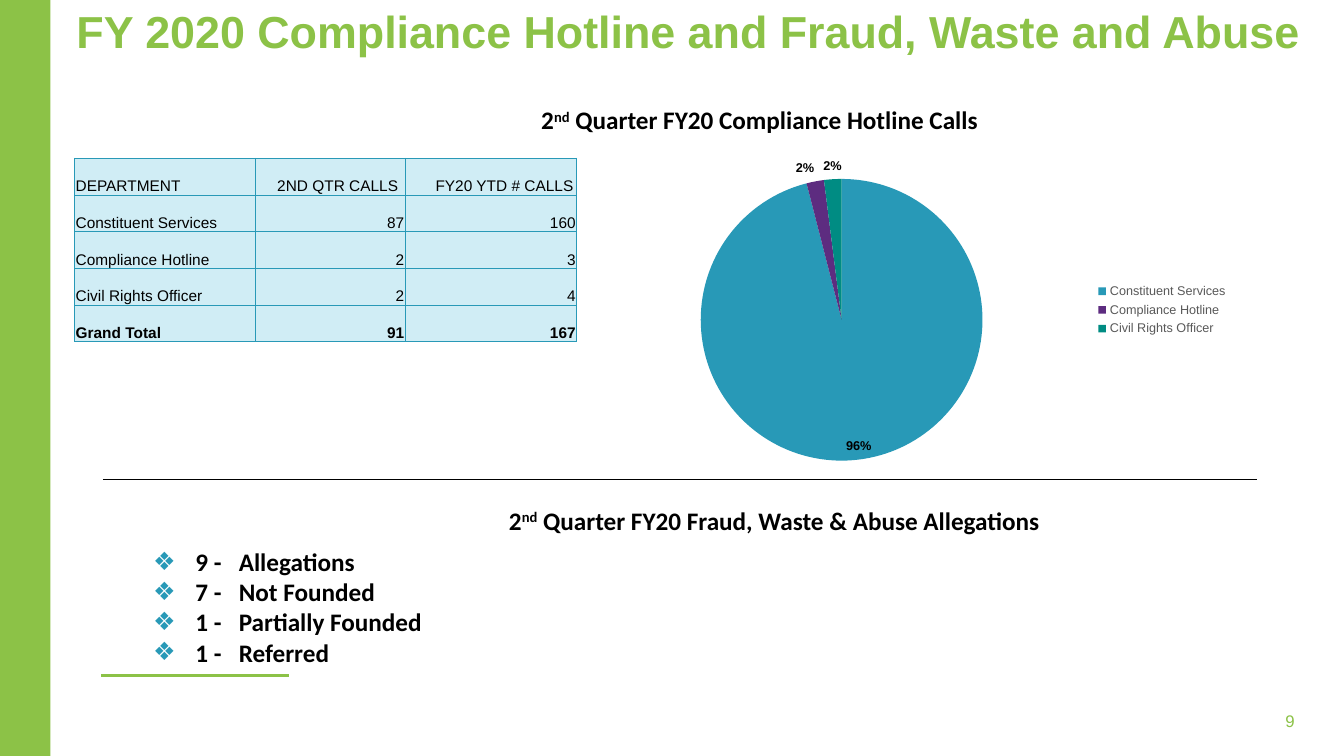
import pptx
import pptx.chart.data
import pptx.dml.color
import pptx.enum.chart
import pptx.enum.shapes
import pptx.enum.text
import pptx.oxml
import pptx.oxml.ns
import pptx.util

Inches = pptx.util.Inches
Pt = pptx.util.Pt
RGBColor = pptx.dml.color.RGBColor
Align = pptx.enum.text.PP_ALIGN
Anchor = pptx.enum.text.MSO_ANCHOR

GREEN = RGBColor(0x8C, 0xC2, 0x47)
TEAL = RGBColor(0x28, 0x99, 0xB7)
PURPLE = RGBColor(0x5D, 0x2C, 0x80)
JADE = RGBColor(0x00, 0x8C, 0x83)
PALE = RGBColor(0xD0, 0xED, 0xF5)
GRAY = RGBColor(0x59, 0x59, 0x59)
BLACK = RGBColor(0, 0, 0)

CALLS = [
    ("DEPARTMENT", "2ND QTR CALLS", "FY20 YTD # CALLS"),
    ("Constituent Services", "87", "160"),
    ("Compliance Hotline", "2", "3"),
    ("Civil Rights Officer", "2", "4"),
    ("Grand Total", "91", "167"),
]
SHARES = [
    ("Constituent Services", 96, TEAL),
    ("Compliance Hotline", 2, PURPLE),
    ("Civil Rights Officer", 2, JADE),
]
CASES = [(9, "Allegations"), (7, "Not Founded"), (1, "Partially Founded"), (1, "Referred")]


def add_xml(parent, text):
    """Append an element written with the a: or c: prefix."""
    tag = text.replace(">", " " + pptx.oxml.ns.nsdecls("a", "c") + ">", 1)
    parent.append(pptx.oxml.parse_xml(tag))


def set_font(font, size, color, name="Arial", bold=False):
    font.size = Pt(size)
    font.name = name
    font.bold = bold
    font.color.rgb = color


def add_box(slide, left, top, width, height, wrap=True):
    box = slide.shapes.add_textbox(Inches(left), Inches(top), Inches(width), Inches(height))
    box.text_frame.word_wrap = wrap
    return box.text_frame


def add_rule(slide, left, right, top, color, weight):
    line = slide.shapes.add_connector(
        pptx.enum.shapes.MSO_CONNECTOR.STRAIGHT,
        Inches(left), Inches(top), Inches(right), Inches(top))
    line.line.color.rgb = color
    line.line.width = Pt(weight)
    add_xml(line._element.spPr, "<a:effectLst></a:effectLst>")


def add_bar(slide):
    bar = slide.shapes.add_shape(
        pptx.enum.shapes.MSO_SHAPE.RECTANGLE, 0, 0, Inches(0.5), Inches(7.5))
    bar.shadow.inherit = False
    bar.fill.solid()
    bar.fill.fore_color.rgb = GREEN
    bar.line.fill.background()


def add_title(slide):
    para = add_box(slide, 0.66, -0.01, 12.67, 0.64).paragraphs[0]
    para.text = "FY 2020 Compliance Hotline and Fraud, Waste and Abuse"
    set_font(para.font, 32, GREEN, bold=True)


def add_number(slide):
    frame = add_box(slide, 9.42, 6.95, 3.42, 0.4)
    frame.margin_left = frame.margin_right = frame.margin_top = frame.margin_bottom = 0
    frame.vertical_anchor = Anchor.MIDDLE
    para = frame.paragraphs[0]
    para.text = "9"
    para.alignment = Align.RIGHT
    set_font(para.font, 12, GREEN)


def add_heading(slide, left, top, width, topic):
    para = add_box(slide, left, top, width, 0.4, wrap=False).paragraphs[0]
    for text in ("2", "nd", f" Quarter FY20 {topic}"):
        run = para.add_run()
        run.text = text
        if text == "nd":
            run.font._element.set("baseline", "30000")
    set_font(para.font, 18, BLACK, "Calibri", True)


def add_list(slide):
    frame = add_box(slide, 1.42, 5.37, 5.24, 1.31)
    for index, (count, label) in enumerate(CASES):
        para = frame.paragraphs[0] if index == 0 else frame.add_paragraph()
        para.text = f"{count} -\t{label}"
        props = para._p.get_or_add_pPr()
        props.set("marL", str(Inches(0.42)))
        props.set("indent", str(-Inches(0.42)))
        add_xml(props, f'<a:buClr><a:srgbClr val="{TEAL}"/></a:buClr>')
        add_xml(props, '<a:buFont typeface="Arial"></a:buFont>')
        add_xml(props, '<a:buChar char="❖"></a:buChar>')
        add_xml(props, f'<a:tabLst><a:tab pos="{Inches(0.85)}" algn="l"/></a:tabLst>')
        set_font(para.font, 18, BLACK, "Calibri", True)


def fill_cell(cell, text, left, align, bold):
    cell.margin_left = Inches(left)
    cell.margin_right = cell.margin_top = Inches(0.01)
    cell.margin_bottom = 0
    cell.vertical_anchor = Anchor.BOTTOM
    para = cell.text_frame.paragraphs[0]
    para.text = text
    para.alignment = align
    set_font(para.font, 11, BLACK, bold=bold)
    props = cell._tc.get_or_add_tcPr()
    for side in ("lnL", "lnR", "lnT", "lnB"):
        add_xml(props, f'<a:{side} w="{Pt(0.5)}"><a:solidFill>'
                       f'<a:srgbClr val="{TEAL}"/></a:solidFill></a:{side}>')
    cell.fill.solid()
    cell.fill.fore_color.rgb = PALE


def add_calls(slide):
    table = slide.shapes.add_table(
        len(CALLS), 3, Inches(0.74), Inches(1.57), Inches(4.98), Inches(1.82)).table
    for col, width in zip(table.columns, (1.79, 1.49, 1.7)):
        col.width = Inches(width)
    for row, texts in enumerate(CALLS):
        for col, text in enumerate(texts):
            left = (0.01, 0.22, 0.3)[col] if row == 0 else 0.01
            align = Align.RIGHT if row and col else Align.LEFT
            fill_cell(table.cell(row, col), text, left, align, row == len(CALLS) - 1)


def set_plot(chart, left, top, width, height):
    """Fix the inner plot area, in fractions of the chart."""
    area = chart._chartSpace.chart.plotArea
    for old in area.findall(pptx.oxml.ns.qn("c:layout")):
        area.remove(old)
    spots = zip("xywh", (left, top, width, height))
    sizes = "".join(f'<c:{key} val="{value}"/>' for key, value in spots)
    add_xml(area, '<c:layout><c:manualLayout><c:layoutTarget val="inner"/>'
                  '<c:xMode val="edge"/><c:yMode val="edge"/>'
                  f'{sizes}</c:manualLayout></c:layout>')
    area.insert(0, area[-1])


def add_pie(slide):
    data = pptx.chart.data.CategoryChartData()
    data.categories = [name for name, _, _ in SHARES]
    data.add_series("Series 1", [value for _, value, _ in SHARES])
    chart = slide.shapes.add_chart(
        pptx.enum.chart.XL_CHART_TYPE.PIE,
        Inches(5.78), Inches(1.44), Inches(6.5), Inches(3.27), data).chart
    set_font(chart.font, 10, BLACK)
    chart.has_title = False
    chart.has_legend = True
    chart.legend.position = pptx.enum.chart.XL_LEGEND_POSITION.RIGHT
    chart.legend.include_in_layout = False
    set_font(chart.legend.font, 9, GRAY)
    plot = chart.plots[0]
    plot.vary_by_categories = True
    for index, (_, _, color) in enumerate(SHARES):
        fill = plot.series[0].points[index].format.fill
        fill.solid()
        fill.fore_color.rgb = color
    labels = plot.series[0].data_labels
    labels.show_value = False
    labels.show_percentage = True
    labels.number_format = "0%"
    labels.number_format_is_linked = False
    labels.position = pptx.enum.chart.XL_LABEL_POSITION.BEST_FIT
    set_font(labels.font, 9.1, BLACK, bold=True)
    set_plot(chart, 0.18, 0.1, 0.43, 0.86)


def main():
    deck = pptx.Presentation()
    deck.slide_width = Inches(13.33)
    deck.slide_height = Inches(7.5)
    slide = deck.slides.add_slide(deck.slide_layouts[6])
    add_rule(slide, 1, 2.87, 6.7, GREEN, 2)
    add_bar(slide)
    add_number(slide)
    add_heading(slide, 5.27, 0.99, 4.6, "Compliance Hotline Calls")
    add_rule(slide, 1.02, 12.47, 4.76, BLACK, 0.5)
    add_heading(slide, 4.95, 4.96, 5.63, "Fraud, Waste & Abuse Allegations")
    add_title(slide)
    add_list(slide)
    add_calls(slide)
    add_pie(slide)
    deck.save("out.pptx")


if __name__ == "__main__":
    main()
